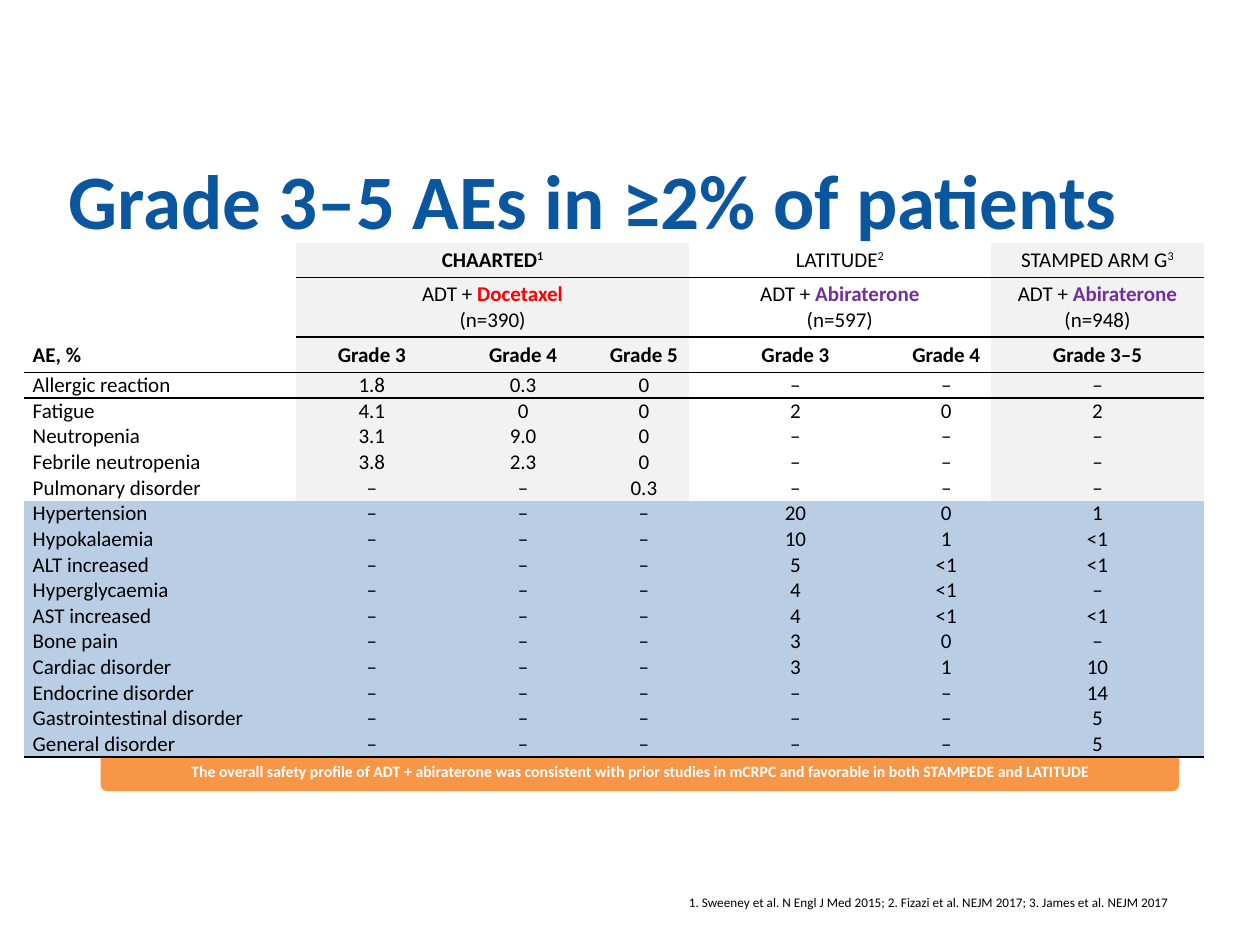
"""Build a slide comparing grade 3–5 adverse events across three trials."""
from dataclasses import dataclass

from lxml.etree import SubElement
from pptx import Presentation
from pptx.dml.color import RGBColor
from pptx.enum.shapes import MSO_SHAPE as Preset
from pptx.enum.text import MSO_ANCHOR as Anchor, MSO_AUTO_SIZE as AutoSize, PP_ALIGN as Align
from pptx.oxml.ns import qn
from pptx.util import Cm, Pt

FONT = "Calibri"
BLACK = RGBColor(0x00, 0x00, 0x00)
WHITE = RGBColor(0xFF, 0xFF, 0xFF)
TITLE_BLUE = RGBColor(0x0A, 0x56, 0x9F)
ORANGE = RGBColor(0xF7, 0x96, 0x46)
RED = RGBColor(0xFF, 0x00, 0x00)
PURPLE = RGBColor(0x70, 0x30, 0xA0)
GREY = RGBColor(0xF2, 0xF2, 0xF2)
LIGHT_BLUE = RGBColor(0xB9, 0xCD, 0xE5)

NO_STYLE = "{2D5ABB26-0587-4C30-8999-92F81FD0307C}"
COLUMN_WIDTHS = (5.49, 3.05, 3.05, 1.82, 4.29, 1.79, 4.31)
HEADER_HEIGHTS = (0.7, 1.2, 0.72)
EVENT_HEIGHT = 0.51
SHADED_COLUMNS = (1, 2, 3, 6)
GRADES = ("AE, %", "Grade 3", "Grade 4", "Grade 5", "Grade 3", "Grade 4", "Grade 3–5")


@dataclass(frozen=True)
class Span:
    text: str
    color: RGBColor = BLACK
    bold: bool = False
    superscript: bool = False


@dataclass(frozen=True)
class Trial:
    first: int
    last: int
    name: tuple[Span, ...]
    treatment: tuple[tuple[Span, ...], ...]


@dataclass(frozen=True)
class Event:
    name: str
    values: str
    highlighted: bool = True


TRIALS = (
    Trial(1, 3, (Span("CHAARTED", bold=True), Span("1", bold=True, superscript=True)),
          ((Span("ADT + "), Span("Docetaxel", RED, True)), (Span("(n=390)"),))),
    Trial(4, 5, (Span("LATITUDE"), Span("2", superscript=True)),
          ((Span("ADT + "), Span("Abiraterone", PURPLE, True)), (Span("(n=597)"),))),
    Trial(6, 6, (Span("STAMPED ARM G"), Span("3", superscript=True)),
          ((Span("ADT + "), Span("Abiraterone", PURPLE, True), Span(" (n=948)")),)),
)

EVENTS = (
    Event("Allergic reaction", "1.8 0.3 0 – – –", False),
    Event("Fatigue", "4.1 0 0 2 0 2", False),
    Event("Neutropenia", "3.1 9.0 0 – – –", False),
    Event("Febrile neutropenia", "3.8 2.3 0 – – –", False),
    Event("Pulmonary disorder", "– – 0.3 – – –", False),
    Event("Hypertension", "– – – 20 0 1"),
    Event("Hypokalaemia", "– – – 10 1 <1"),
    Event("ALT increased", "– – – 5 <1 <1"),
    Event("Hyperglycaemia", "– – – 4 <1 –"),
    Event("AST increased", "– – – 4 <1 <1"),
    Event("Bone pain", "– – – 3 0 –"),
    Event("Cardiac disorder", "– – – 3 1 10"),
    Event("Endocrine disorder", "– – – – – 14"),
    Event("Gastrointestinal disorder", "– – – – – 5"),
    Event("General disorder", "– – – – – 5"),
)


def write(frame, lines: tuple[tuple[Span, ...], ...], size: float, align: Align) -> None:
    for index, spans in enumerate(lines):
        paragraph = frame.add_paragraph() if index else frame.paragraphs[0]
        paragraph.alignment = align
        for span in spans:
            run = paragraph.add_run()
            run.text = span.text
            run.font.name = FONT
            run.font.size = Pt(size)
            run.font.bold = span.bold
            run.font.color.rgb = span.color
            if span.superscript:
                run._r.get_or_add_rPr().set("baseline", "30000")


def place(shape, left: float, top: float, width: float, height: float) -> None:
    shape.left, shape.top = Cm(left), Cm(top)
    shape.width, shape.height = Cm(width), Cm(height)


def add_border(cell, side: str) -> None:
    line = SubElement(cell._tc.get_or_add_tcPr(), qn(f"a:{side}"), w=str(Pt(1)))
    SubElement(SubElement(line, qn("a:solidFill")), qn("a:srgbClr"), val=str(BLACK))


def format_cell(cell, row: int, column: int) -> None:
    header_rows = len(HEADER_HEIGHTS)
    last_header, last_row = header_rows - 1, header_rows + len(EVENTS) - 1
    ruled = {last_header, last_row} | (set(range(last_header)) if column else set())
    if row - 1 in ruled:
        add_border(cell, "lnT")
    if row in ruled:
        add_border(cell, "lnB")
    if row > last_header and EVENTS[row - header_rows].highlighted:
        cell.fill.solid()
        cell.fill.fore_color.rgb = LIGHT_BLUE
    elif column in SHADED_COLUMNS:
        cell.fill.solid()
        cell.fill.fore_color.rgb = GREY
    else:
        cell.fill.background()
    cell.margin_left = Cm(0 if column else 0.18)
    cell.margin_right = Cm(0)
    cell.margin_top = cell.margin_bottom = Cm(0.08 if row <= last_header else 0)
    cell.vertical_anchor = Anchor.BOTTOM if 0 < row <= last_header else Anchor.MIDDLE
    cell.text_frame.paragraphs[0]._p.get_or_add_endParaRPr().set("sz", "1200")


def add_event_table(slide) -> None:
    heights = HEADER_HEIGHTS + (EVENT_HEIGHT,) * len(EVENTS)
    graphic = slide.shapes.add_table(len(heights), len(COLUMN_WIDTHS), Cm(0.48), Cm(4.89),
                                     Cm(sum(COLUMN_WIDTHS)), Cm(sum(heights)))
    table = graphic.table
    table.first_row = table.horz_banding = False
    next(graphic.element.iter(qn("a:tableStyleId"))).text = NO_STYLE
    for column, width in zip(table.columns, COLUMN_WIDTHS):
        column.width = Cm(width)
    for index, height in enumerate(heights):
        table.rows[index].height = Cm(height)
        for column in range(len(COLUMN_WIDTHS)):
            format_cell(table.cell(index, column), index, column)
    for trial in TRIALS:
        for index, lines in enumerate(((trial.name,), trial.treatment)):
            cell = table.cell(index, trial.first)
            if trial.last > trial.first:
                cell.merge(table.cell(index, trial.last))
            write(cell.text_frame, lines, 12, Align.CENTER)
    body = [(event.name, *event.values.split()) for event in EVENTS]
    for index, texts in enumerate([GRADES, *body], start=len(HEADER_HEIGHTS) - 1):
        for column, text in enumerate(texts):
            span = Span(text, bold=texts is GRADES)
            write(table.cell(index, column).text_frame, ((span,),), 12,
                  Align.CENTER if column else Align.LEFT)


def add_title(slide) -> None:
    title = slide.shapes.title
    place(title, 1.02, 2.62, 21.89, 2.77)
    title.text_frame.vertical_anchor = Anchor.MIDDLE
    title.text_frame.auto_size = AutoSize.NONE
    write(title.text_frame, ((Span("Grade 3–5 AEs in ≥2% of patients", TITLE_BLUE, True),),),
          44, Align.CENTER)


def add_references(slide) -> None:
    references = slide.placeholders[1]
    place(references, 12.17, 17.25, 11.38, 1.09)
    frame = references.text_frame
    frame.margin_left = frame.margin_right = frame.margin_top = frame.margin_bottom = 0
    frame.vertical_anchor = Anchor.BOTTOM
    frame.auto_size = AutoSize.NONE
    properties = frame.paragraphs[0]._p.get_or_add_pPr()
    properties.set("marL", "0")
    properties.set("indent", "0")
    SubElement(properties, qn("a:buNone"))
    frame.paragraphs[0].space_before = Pt(0)
    write(frame, ((Span("1. Sweeney et al. N Engl J Med 2015; 2. Fizazi et al. NEJM 2017; "
                        "3. James et al. NEJM 2017"),),), 7.5, Align.RIGHT)


def add_conclusion(slide) -> None:
    banner = slide.shapes.add_shape(Preset.ROUNDED_RECTANGLE, Cm(2.03), Cm(15.16), Cm(21.74), Cm(0.79))
    banner.shadow.inherit = False
    banner.fill.solid()
    banner.fill.fore_color.rgb = ORANGE
    banner.line.fill.background()
    banner.text_frame.vertical_anchor = Anchor.MIDDLE
    write(banner.text_frame, ((Span(
        "The overall safety profile of ADT + abiraterone was consistent with prior studies "
        "in mCRPC and favorable in both STAMPEDE and LATITUDE", WHITE, True),),), 9, Align.CENTER)


def main() -> None:
    presentation = Presentation()
    presentation.slide_width, presentation.slide_height = Cm(25.4), Cm(19.05)
    slide = presentation.slides.add_slide(presentation.slide_layouts[1])
    add_title(slide)
    add_references(slide)
    add_conclusion(slide)
    add_event_table(slide)
    presentation.save("out.pptx")


if __name__ == "__main__":
    main()
